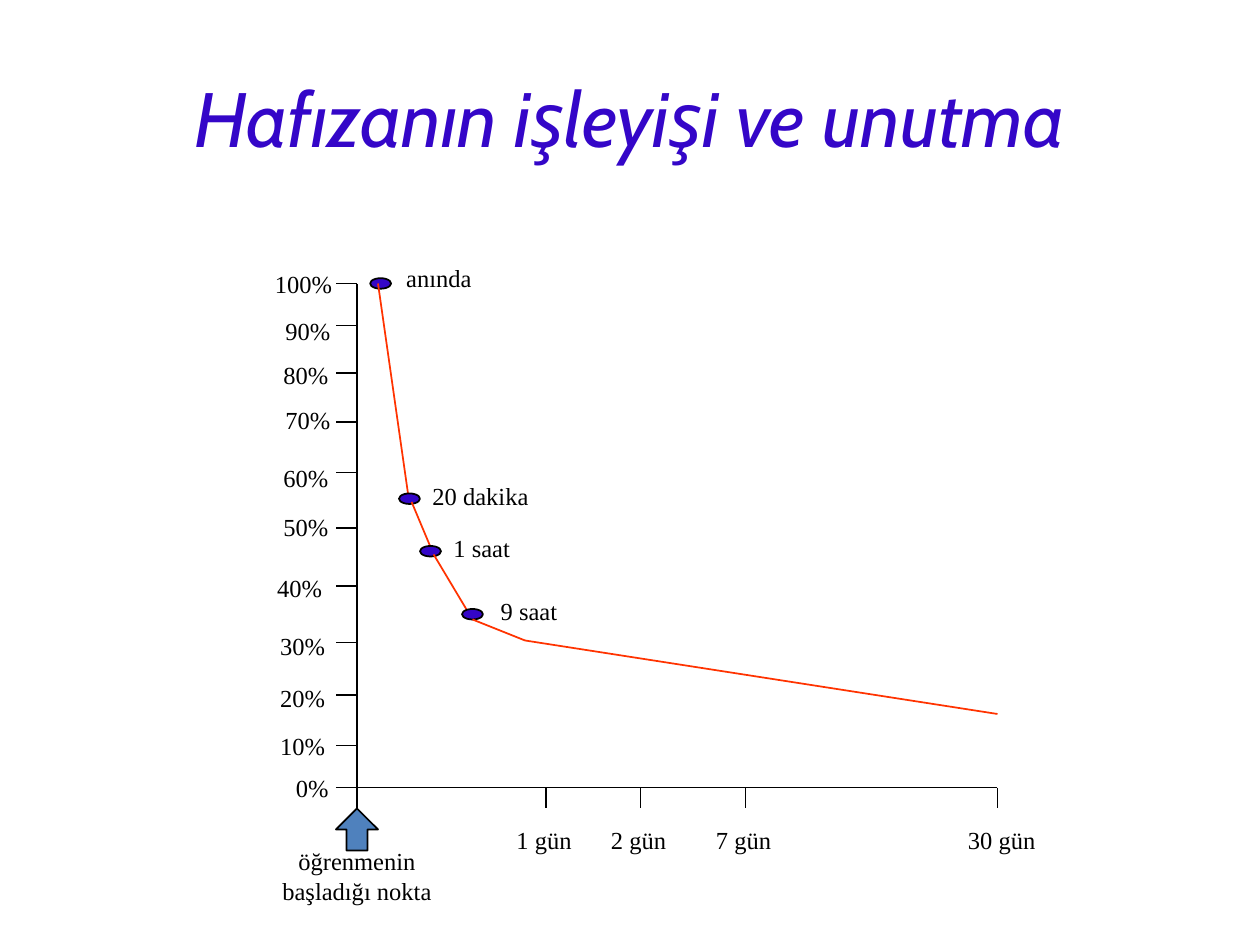
import collections

import pptx
import pptx.dml.color
import pptx.enum.shapes
import pptx.enum.text
import pptx.oxml.ns
import pptx.util
from lxml import etree

COLOURS = {"title": "3406C8", "point": "3406C8", "curve": "FF3300",
           "axis": "000000", "text": "000000", "arrow": "4F81BD"}
CELL = pptx.util.Inches(1) / 12
Box = collections.namedtuple("Box", "column row width height")

SCALE = [("100%", 0, -7, -2), ("90%", 4, -6, 2.5), ("80%", 8.5, -6.2, 6.7),
         ("70%", 13.2, -6, 11), ("60%", 18, -6.2, 16.5), ("50%", 23.3, -6.2, 21.2),
         ("40%", 28.8, -6.8, 27), ("30%", 34.2, -6.5, 32.5), ("20%", 39.2, -6.5, 37.5),
         ("10%", 44, -6.5, 42), ("0%", 48, -5, 46)]
DAYS = [("1 gün", 20, 16, 8), ("2 gün", 29, 25, 8), ("7 gün", 39, 35, 10), ("30 gün", 63, 59, 9)]
POINTS = [("anında", (3.25, -0.5), (5.5, -2.5)), ("20 dakika", (6, 20), (8, 18.2)),
          ("1 saat", (8, 25), (10, 23.2)), ("9 saat", (12, 31), (14.5, 29.2))]
CURVE = [((4, 0), (7, 21)), ((7.2, 20.8), (9.3, 25.8)), ((9.3, 25.8), (13, 32)),
         ((13, 32), (18, 34)), ((18, 34), (63, 41))]


def colour(name):
    """Return a named colour of the slide."""
    return pptx.dml.color.RGBColor.from_string(COLOURS[name])


def place(box, column, row):
    """Turn a grid position inside the box into slide lengths."""
    return round((box.column + column) * CELL), round((box.row + row) * CELL)


def add_line(page, box, start, end, name="axis"):
    """Draw a thin straight line between two grid positions."""
    line = page.shapes.add_connector(pptx.enum.shapes.MSO_CONNECTOR.STRAIGHT,
                                     *place(box, *start), *place(box, *end))
    line.line.color.rgb = colour(name)
    line.line.width = pptx.util.Pt(1)
    etree.SubElement(line._element.spPr, pptx.oxml.ns.qn("a:effectLst"))


def add_figure(page, box, kind, position, width, height, name):
    """Draw a filled and outlined preset shape."""
    figure = page.shapes.add_shape(kind, *place(box, *position),
                                   round(width * CELL), round(height * CELL))
    figure.shadow.inherit = False
    figure.fill.solid()
    figure.fill.fore_color.rgb = colour(name)
    figure.line.color.rgb = colour("axis")
    figure.line.width = pptx.util.Pt(1)


def add_label(page, box, text, position, width=8, height=4, align="LEFT"):
    """Write a wrapped label in a text box."""
    label = page.shapes.add_textbox(*place(box, *position),
                                    round(width * CELL), round(height * CELL))
    label.text_frame.word_wrap = True
    para = label.text_frame.paragraphs[0]
    para.text = text
    para.alignment = pptx.enum.text.PP_ALIGN[align]
    para.font.size = pptx.util.Pt(14)
    para.font.name = "Times New Roman"
    para.font.color.rgb = colour("text")


def add_title(page, box, text):
    """Place and format the title placeholder."""
    title = page.shapes.title
    title.left, title.top = place(box, 0, 0)
    title.width, title.height = round(box.width * CELL), round(box.height * CELL)
    frame = title.text_frame
    frame.auto_size = pptx.enum.text.MSO_AUTO_SIZE.NONE
    frame.vertical_anchor = pptx.enum.text.MSO_ANCHOR.MIDDLE
    para = frame.paragraphs[0]
    para.text = text
    para.alignment = pptx.enum.text.PP_ALIGN.CENTER
    para.font.size = pptx.util.Pt(44)
    para.font.name = "Cabin"
    para.font.italic = True
    para.font.color.rgb = colour("title")


def add_axes(page, box):
    """Draw both axes with their ticks and labels."""
    tick = 2
    add_line(page, box, (tick, 0), (tick, box.height + tick))
    add_line(page, box, (0, box.height), (box.width, box.height))
    for text, row, label_column, label_row in SCALE:
        if row < box.height:
            add_line(page, box, (tick, row), (0, row))
        add_label(page, box, text, (label_column, label_row))
    for text, column, label_column, width in DAYS:
        add_line(page, box, (column, box.height), (column, box.height + tick))
        add_label(page, box, text, (label_column, box.height + 3), width)


def add_curve(page, box):
    """Draw the forgetting curve with its marked times."""
    for index, segment in enumerate(CURVE):
        if index < len(POINTS):
            text, position, label_position = POINTS[index]
            add_figure(page, box, pptx.enum.shapes.MSO_SHAPE.OVAL, position, 2, 1, "point")
            add_label(page, box, text, label_position, 16)
        add_line(page, box, *segment, "curve")


def add_start(page, box):
    """Mark the starting point below the vertical axis."""
    add_figure(page, box, pptx.enum.shapes.MSO_SHAPE.UP_ARROW,
               (0, box.height + 2), 4, 4, "arrow")
    for_text = (-9, box.height + 5)
    add_label(page, box, "öğrenmenin başladığı nokta", for_text, 22, 6.8, "CENTER")


def main():
    """Build and save the slide."""
    deck = pptx.Presentation()
    deck.slide_width, deck.slide_height = round(120 * CELL), round(90 * CELL)
    page = deck.slides.add_slide(deck.slide_layouts.get_by_name("Title Only"))
    chart = Box(32, 27, 63, 48)
    add_title(page, Box(6, 3.6, 108, 15), "Hafızanın işleyişi ve unutma")
    add_axes(page, chart)
    add_curve(page, chart)
    add_start(page, chart)
    deck.save("out.pptx")


if __name__ == "__main__":
    main()
